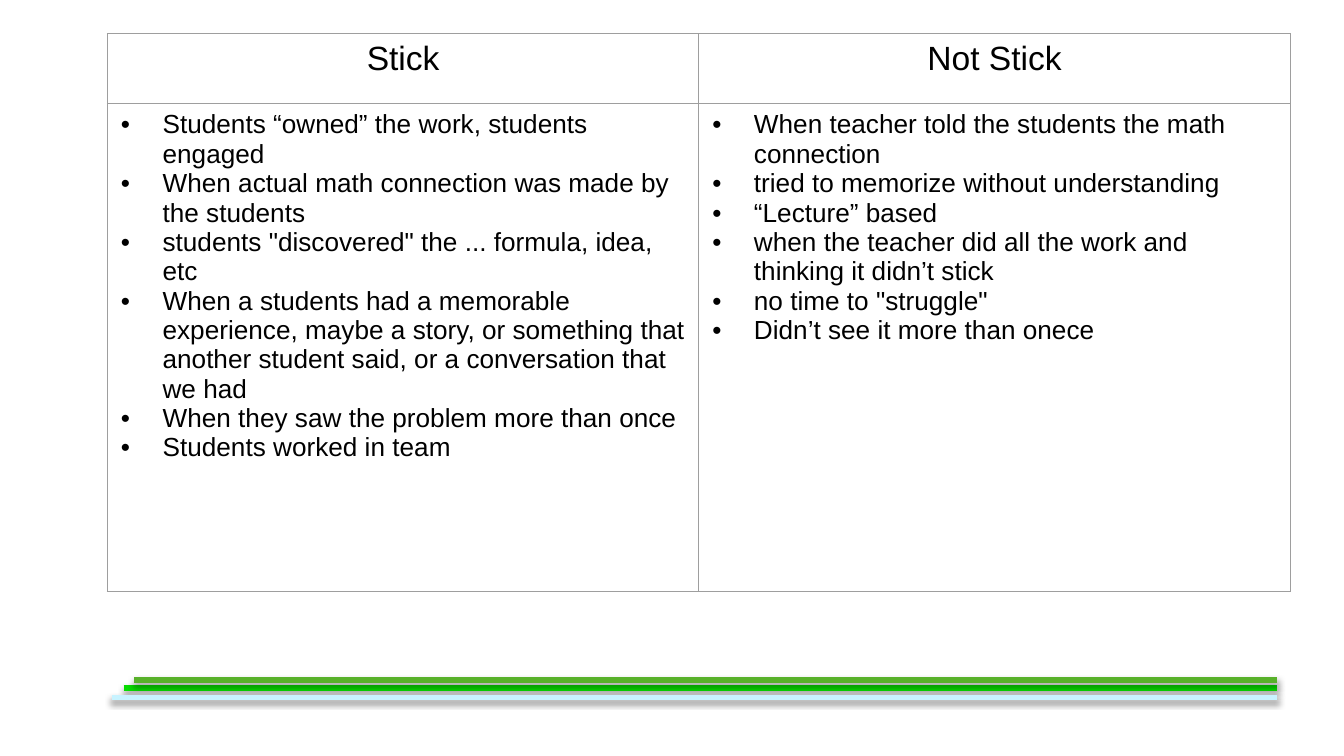
from lxml import etree
from pptx import Presentation
from pptx.dml.color import RGBColor
from pptx.enum.shapes import MSO_CONNECTOR
from pptx.enum.text import PP_ALIGN
from pptx.oxml.ns import qn
from pptx.util import Inches, Pt

STRAIGHT = MSO_CONNECTOR.STRAIGHT
CENTER = PP_ALIGN.CENTER

COLUMNS = {
    "Stick": [
        "Students “owned” the work, students engaged",
        "When actual math connection was made by the students",
        'students "discovered" the ... formula, idea, etc',
        "When a students had a memorable experience, maybe a story, or something "
        "that another student said, or a conversation that we had",
        "When they saw the problem more than once",
        "Students worked in team",
    ],
    "Not Stick": [
        "When teacher told the students the math connection",
        "tried to memorize without understanding",
        "“Lecture” based",
        "when the teacher did all the work and thinking it didn’t stick",
        'no time to "struggle"',
        "Didn’t see it more than onece",
    ],
}
# Left end, height on the slide, colour
STRIPES = [(0.92, 5.12, "07DC01"), (1, 5.06, "58B12A"), (0.83, 5.19, "C8F3FF")]
STRIPE_RIGHT = 9.5

SLIDE_WIDTH = 10
SLIDE_HEIGHT = SLIDE_WIDTH * 9 / 16
TABLE_LEFT, TABLE_TOP = 0.8, 0.25
COLUMN_WIDTH = 4.4
ROW_HEIGHTS = [0.52, 3.63]
BULLET_INDENT = Inches(0.31)
BORDER_COLOR, TEXT_COLOR = "9E9E9E", "000000"


def rgb(value):
    return RGBColor.from_string(value)


def add_xml(parent, tag, **attributes):
    return etree.SubElement(
        parent, qn(tag), {key: str(value) for key, value in attributes.items()})


def add_color(parent, value):
    return add_xml(parent, "a:srgbClr", val=value)


def add_stripe(slide, left, height, color):
    stripe = slide.shapes.add_connector(
        STRAIGHT, Inches(left), Inches(height), Inches(STRIPE_RIGHT), Inches(height))
    stripe.line.color.rgb = rgb(color)
    stripe.line.width = Pt(3)
    effects = add_xml(stripe._element.spPr, "a:effectLst")
    shadow = add_xml(effects, "a:outerShdw", blurRad=Pt(3.1), dist=Pt(1.8),
                     dir=90 * 60000, rotWithShape=0)
    add_xml(add_color(shadow, "000000"), "a:alpha", val=35000)


def add_borders(cell):
    properties = cell._tc.get_or_add_tcPr()
    for side in ("a:lnL", "a:lnR", "a:lnT", "a:lnB"):
        border = add_xml(properties, side, w=Pt(0.75))
        add_color(add_xml(border, "a:solidFill"), BORDER_COLOR)


def add_bullet(paragraph):
    properties = paragraph._p.get_or_add_pPr()
    properties.set("marL", str(BULLET_INDENT))
    properties.set("indent", str(-BULLET_INDENT))
    add_color(add_xml(properties, "a:buClr"), TEXT_COLOR)
    add_xml(properties, "a:buFont", typeface="Arial")
    add_xml(properties, "a:buChar", char="•")


def fill_cell(cell, text, size, bulleted):
    add_borders(cell)
    cell.fill.background()
    cell.text_frame.text = text
    for paragraph in cell.text_frame.paragraphs:
        if bulleted:
            add_bullet(paragraph)
        else:
            paragraph.alignment = CENTER
        for run in paragraph.runs:
            run.font.name = "Arial"
            run.font.size = Pt(size)
            run.font.bold = False
            run.font.color.rgb = rgb(TEXT_COLOR)


def add_comparison(slide):
    table = slide.shapes.add_table(
        len(ROW_HEIGHTS), len(COLUMNS), Inches(TABLE_LEFT), Inches(TABLE_TOP),
        Inches(COLUMN_WIDTH * len(COLUMNS)), Inches(sum(ROW_HEIGHTS))).table
    table.horz_banding = False
    for row, height in zip(table.rows, ROW_HEIGHTS):
        row.height = Inches(height)
    for index, (heading, points) in enumerate(COLUMNS.items()):
        table.columns[index].width = Inches(COLUMN_WIDTH)
        fill_cell(table.cell(0, index), heading, 18, bulleted=False)
        fill_cell(table.cell(1, index), "\n".join(points), 14, bulleted=True)


def main():
    presentation = Presentation()
    presentation.slide_width = Inches(SLIDE_WIDTH)
    presentation.slide_height = Inches(SLIDE_HEIGHT)
    slide = presentation.slides.add_slide(presentation.slide_layouts[6])
    background = slide.background.fill
    background.solid()
    background.fore_color.rgb = rgb("FFFFFF")
    for left, height, color in STRIPES:
        add_stripe(slide, left, height, color)
    add_comparison(slide)
    presentation.save("out.pptx")


if __name__ == "__main__":
    main()
